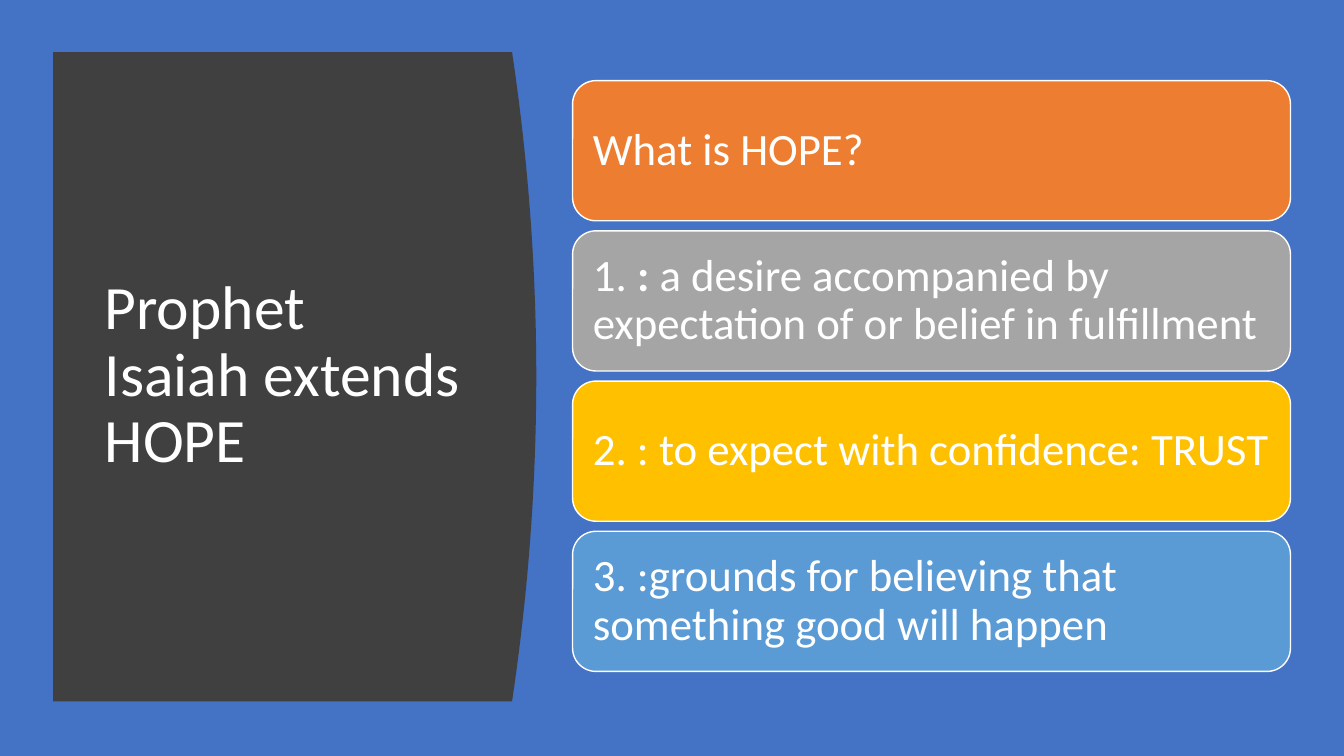
from pptx import Presentation
from pptx.dml.color import RGBColor
from pptx.enum import shapes, text
from pptx.util import Pt


def color(hex_code):
    return RGBColor.from_string(hex_code)


class SlideBuilder:
    font = "Calibri"
    ink = "FFFFFF"
    line_spacing = 0.9

    def __init__(self, deck, background):
        self.page = deck.slides.add_slide(deck.slide_layouts[6])
        fill = self.page.background.fill
        fill.solid()
        fill.fore_color.rgb = color(background)

    def paint(self, shape, fill):
        shape.shadow.inherit = False
        shape.fill.solid()
        shape.fill.fore_color.rgb = color(fill)

    def add_text(self, shape, spans, size, inset_x, inset_y):
        """Fill a shape with one paragraph made of (words, bold) spans."""
        frame = shape.text_frame
        frame.word_wrap = True
        frame.vertical_anchor = text.MSO_ANCHOR.MIDDLE
        frame.margin_left = frame.margin_right = Pt(inset_x)
        frame.margin_top = frame.margin_bottom = Pt(inset_y)
        para = frame.paragraphs[0]
        para.alignment = text.PP_ALIGN.LEFT
        para.line_spacing = self.line_spacing
        para.font.name = self.font
        para.font.size = Pt(size)
        para.font.color.rgb = color(self.ink)
        for words, bold in spans:
            span = para.add_run()
            span.text = words
            if bold:
                span.font.bold = True
        return para

    def curved_panel(self, left, top, width, height, bulge, fill, steps=40):
        """Rectangle whose right side bows outward as a parabola."""
        points = []
        for step in range(steps + 1):
            t = step / steps
            x = left + width + bulge * 4 * t * (1 - t)
            points.append((Pt(x), Pt(top + height * t)))
        points.append((Pt(left), Pt(top + height)))
        outline = self.page.shapes.build_freeform(Pt(left), Pt(top))
        outline.add_line_segments(points, close=True)
        panel = outline.convert_to_shape()
        self.paint(panel, fill)
        panel.line.fill.background()

    def title(self, left, top, width, height, lines, size):
        box = self.page.shapes.add_textbox(Pt(left), Pt(top), Pt(width), Pt(height))
        first, *rest = lines
        para = self.add_text(box, [(first, False)], size, 7.2, 3.6)
        for line in rest:
            para.add_line_break()
            para.add_run().text = line

    def card(self, left, top, width, height, fill, spans, size):
        box = self.page.shapes.add_shape(
            shapes.MSO_SHAPE.ROUNDED_RECTANGLE, Pt(left), Pt(top), Pt(width), Pt(height))
        self.paint(box, fill)
        box.line.color.rgb = color(self.ink)
        box.line.width = Pt(1)
        self.add_text(box, spans, size, 9.6, 9.6)


CARDS = [
    ("ED7D31", [("What is HOPE?", False)]),
    ("A5A5A5", [("1. ", False), (": ", True),
                ("a desire accompanied by expectation of or belief in fulfillment", False)]),
    ("FFC000", [("2. : to expect with confidence: TRUST", False)]),
    ("5B9BD5", [("3. :grounds for believing that something good will happen", False)]),
]


def main():
    deck = Presentation()
    deck.slide_width, deck.slide_height = Pt(960), Pt(540)
    slide = SlideBuilder(deck, "4472C4")

    # Title panel on the left
    slide.curved_panel(38, 37.2, 327.8, 463.8, 17.3, "404040")
    slide.title(67.7, 80, 269.3, 377.3, ["Prophet", "Isaiah extends HOPE"], 44)

    # Stack of definition cards on the right
    card_height, pitch = 100.1, 107.3
    for row, (fill, spans) in enumerate(CARDS):
        slide.card(409, 57.6 + row * pitch, 512.8, card_height, fill, spans, 32)

    deck.save("out.pptx")


if __name__ == "__main__":
    main()
